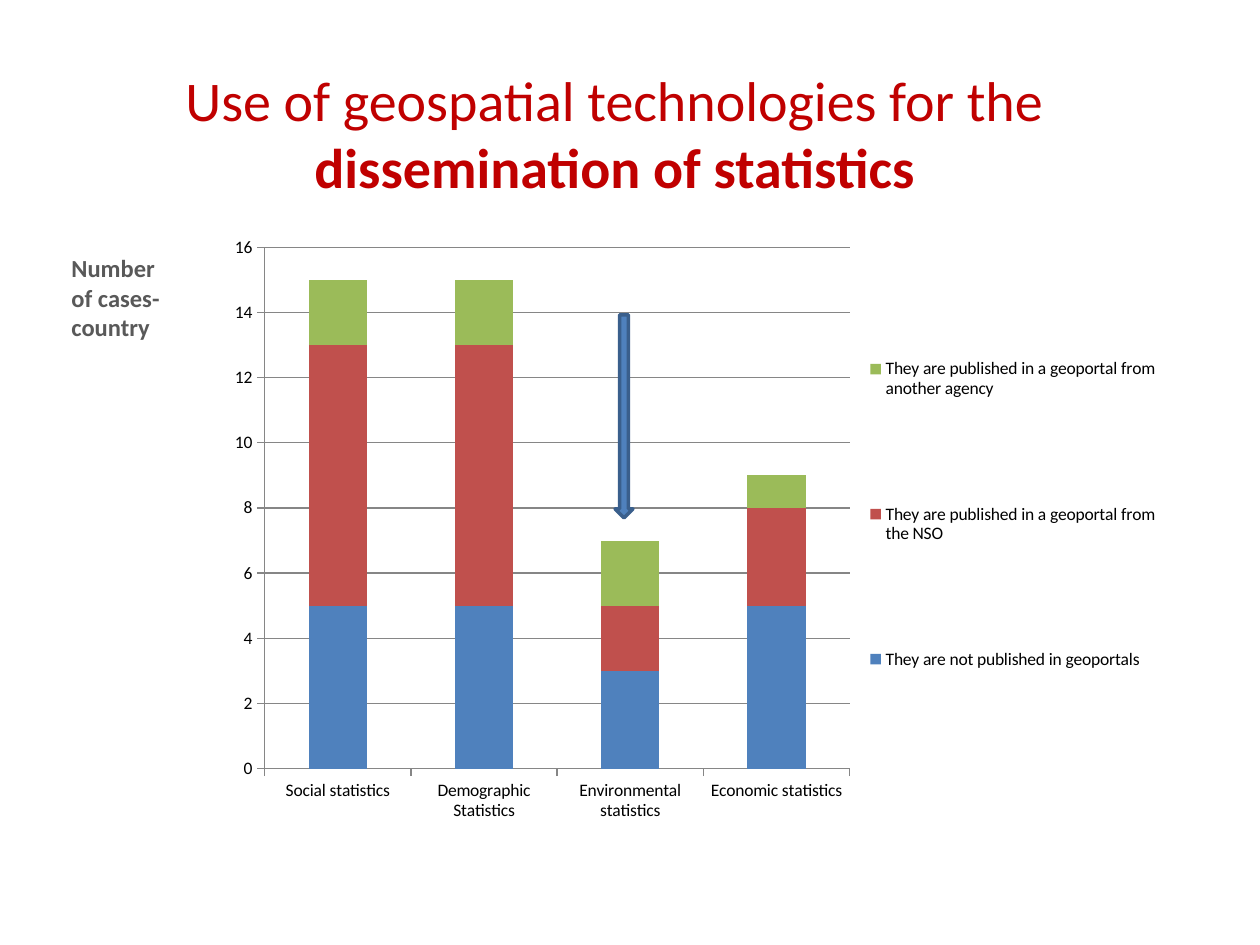
import pptx
import pptx.chart.data
import pptx.dml.color
import pptx.enum.chart
import pptx.enum.shapes
import pptx.enum.text
import pptx.oxml
import pptx.oxml.ns
import pptx.util

Cm = pptx.util.Cm
Pt = pptx.util.Pt
qn = pptx.oxml.ns.qn

COLOURS = {
    "title": "C00000",
    "label": "595959",
    "text": "000000",
    "grid": "868686",
    "blue": "4F81BD",
    "red": "C0504D",
    "green": "9BBB59",
    "outline": "3A5F8C",
}
CATEGORIES = [
    "Social statistics",
    "Demographic Statistics",
    "Environmental statistics",
    "Economic statistics",
]
SERIES = [
    ("They are not published in geoportals", (5, 5, 3, 5), "blue"),
    ("They are published in a geoportal from the NSO", (8, 8, 2, 3), "red"),
    ("They are published in a geoportal from another agency", (2, 2, 2, 1), "green"),
]


def colour(name):
    return pptx.dml.color.RGBColor.from_string(COLOURS[name])


def apply(target, values):
    for name, value in values.items():
        setattr(target, name, value)


class SlideBuilder:
    typeface = "Calibri"

    def __init__(self, deck):
        self.page = deck.slides.add_slide(deck.slide_layouts[6])

    def style(self, font, size, tone, bold=False):
        apply(font, {"name": self.typeface, "size": Pt(size), "bold": bold})
        font.color.rgb = colour(tone)

    def text(self, place, spans, size, tone, align):
        box = self.page.shapes.add_textbox(*map(Cm, place))
        apply(box.text_frame, {"word_wrap": True})
        para = box.text_frame.paragraphs[0]
        para.alignment = align
        for words, bold in spans:
            span = para.add_run()
            span.text = words
            self.style(span.font, size, tone, bold)

    def arrow(self, place, fill, line, width):
        kind = pptx.enum.shapes.MSO_SHAPE.DOWN_ARROW
        shape = self.page.shapes.add_shape(kind, *map(Cm, place))
        shape.shadow.inherit = False
        shape.fill.solid()
        shape.fill.fore_color.rgb = colour(fill)
        shape.line.color.rgb = colour(line)
        shape.line.width = Pt(width)

    def arrange(self, parent, index, fractions, inner=False):
        for old in parent.findall(qn("c:layout")):
            parent.remove(old)
        target = '<c:layoutTarget val="inner"/>' if inner else ""
        modes = '<c:xMode val="edge"/><c:yMode val="edge"/>'
        sizes = "".join(f'<c:{key} val="{value}"/>' for key, value in zip("xywh", fractions))
        parent.insert(index, pptx.oxml.parse_xml(
            f'<c:layout {pptx.oxml.ns.nsdecls("c")}><c:manualLayout>'
            f"{target}{modes}{sizes}</c:manualLayout></c:layout>"
        ))

    def stacked_chart(self, place, categories, series):
        data = pptx.chart.data.CategoryChartData()
        data.categories = categories
        for name, values, _ in series:
            data.add_series(name, values)
        kind = pptx.enum.chart.XL_CHART_TYPE.COLUMN_STACKED
        chart = self.page.shapes.add_chart(kind, *map(Cm, place), data).chart
        apply(chart, {"has_title": False, "has_legend": True})
        self.style(chart.font, 10, "text")
        plot = chart.plots[0]
        apply(plot, {"gap_width": 150, "overlap": 100, "vary_by_categories": False})
        for bars, (_, _, tone) in zip(plot.series, series):
            bars.format.fill.solid()
            bars.format.fill.fore_color.rgb = colour(tone)
        value_axis = chart.value_axis
        apply(value_axis, {"minimum_scale": 0, "maximum_scale": 16, "major_unit": 2,
                           "has_major_gridlines": True})
        for axis in (chart.category_axis, value_axis):
            axis.major_tick_mark = pptx.enum.chart.XL_TICK_MARK.OUTSIDE
        for part in (chart.category_axis, value_axis, value_axis.major_gridlines):
            part.format.line.color.rgb = colour("grid")
            part.format.line.width = Pt(0.75)
        legend = chart.legend
        apply(legend, {"position": pptx.enum.chart.XL_LEGEND_POSITION.RIGHT,
                       "include_in_layout": False})
        root = chart.element
        self.arrange(root.find(".//" + qn("c:plotArea")), 0, (0.05, 0.04, 0.61, 0.86), True)
        self.arrange(root.find(".//" + qn("c:legend")), 1, (0.67, 0.05, 0.32, 0.86))


def main():
    deck = pptx.Presentation()
    apply(deck, {"slide_width": Cm(25.4), "slide_height": Cm(19.05)})
    slide = SlideBuilder(deck)
    align = pptx.enum.text.PP_ALIGN
    title = [("Use of geospatial technologies for the ", False),
             ("dissemination of statistics", True)]
    slide.text((1.09, 1.19, 22.61, 3), title, 32, "title", align.CENTER)
    slide.stacked_chart((4.37, 4.5, 19.33, 12.22), CATEGORIES, SERIES)
    slide.text((1.19, 4.98, 2.59, 2.06), [("Number of cases-country", True)],
               14, "label", align.LEFT)
    slide.arrow((12.4, 6.35, 0.36, 4.09), "blue", "outline", 2)
    deck.save("out.pptx")


if __name__ == "__main__":
    main()
